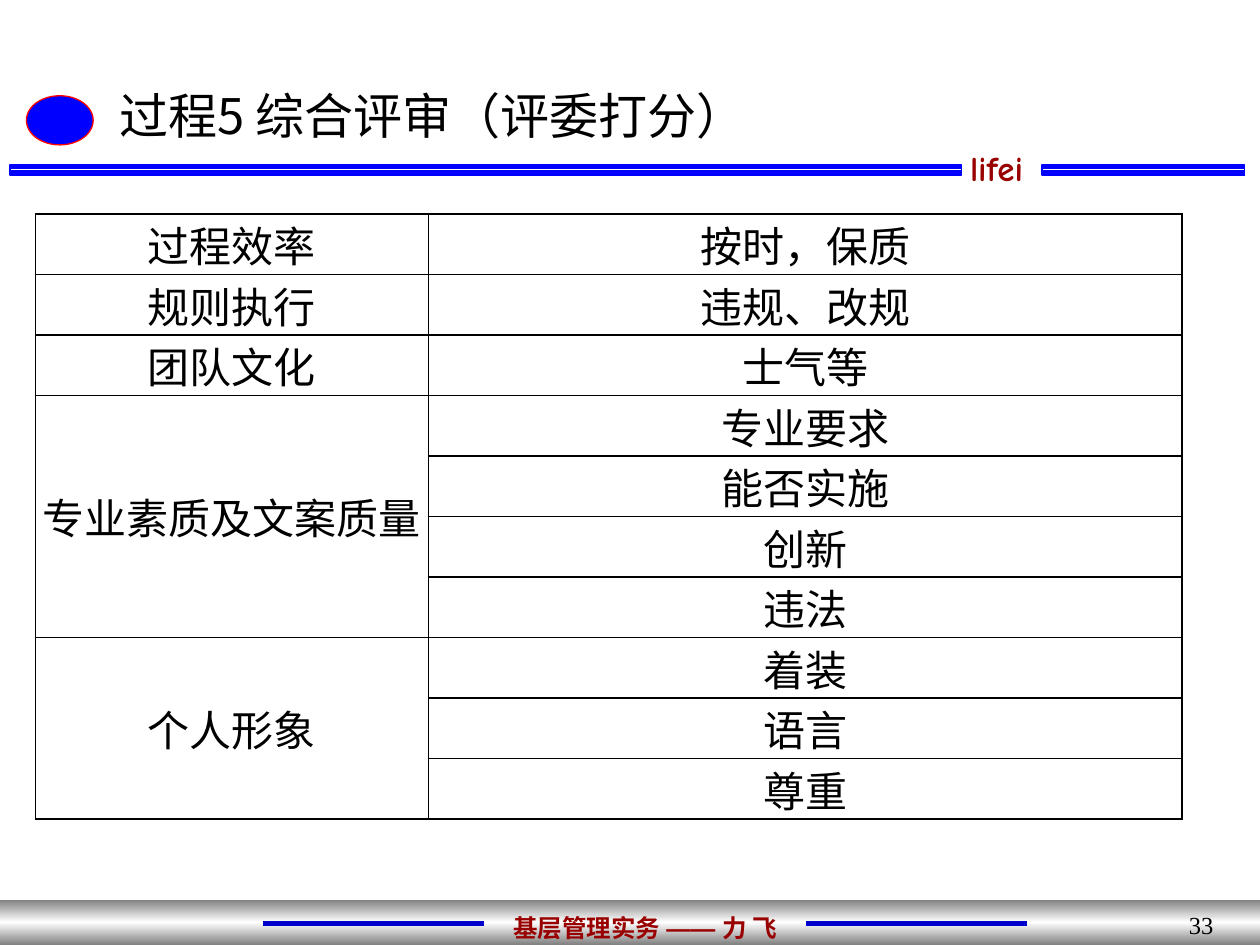
from copy import deepcopy

from lxml import etree
from pptx import Presentation
from pptx import util as u
from pptx.dml.color import RGBColor
from pptx.enum import dml, shapes, text
from pptx.oxml.ns import qn

TITLE = "过程5 综合评审（评委打分）"
CRITERIA = [
    ("过程效率", ["按时，保质"]),
    ("规则执行", ["违规、改规"]),
    ("团队文化", ["士气等"]),
    ("专业素质及文案质量", ["专业要求", "能否实施", "创新", "违法"]),
    ("个人形象", ["着装", "语言", "尊重"]),
]
BRAND = "lifei"
PAGE_NUMBER = "33"
HEADER_BARS = [(0.08, 7.55), (8.27, 1.61)]  # left, width
FOOTER_LINES = [(2.09, 3.84), (6.4, 8.15)]  # from, to
COLUMN_WIDTHS = (3.12, 5.98)
ROW_HEIGHT = 0.48

THEME = {
    "text": "000000", "accent": "990000", "bar": "0000FF", "line": "0000CC",
    "paper": "FFFFFF", "edge": "808080", "logo": "FF0000",
    "cjk": "Noto Sans CJK SC", "latin": "Arial", "brand": "Comic Neue",
    "number": "Times New Roman",
    "title_size": 28, "table_size": 24, "brand_size": 20, "footer_size": 14,
}
FOOTER_RUNS = [("基层管理实务 ", "cjk"), ("—— ", "latin"), ("力 飞", "cjk")]


def color(name):
    return RGBColor.from_string(THEME[name])


def box(left, top, width, height):
    return [u.Inches(value) for value in (left, top, width, height)]


def style_run(run, font, size, ink="text", bold=False):
    """Format a run, naming its font for both Latin and East Asian text."""
    run.font.name = THEME[font]
    run.font.size = u.Pt(THEME[size])
    run.font.bold = bold
    run.font.color.rgb = color(ink)
    east_asian = etree.Element(qn("a:ea"), typeface=THEME[font])
    run.font._element.find(qn("a:latin")).addnext(east_asian)


def add_text(slide, place, runs, size, ink, align, bold=False):
    shape = slide.shapes.add_textbox(*box(*place))
    shape.text_frame.word_wrap = True
    paragraph = shape.text_frame.paragraphs[0]
    paragraph.alignment = align
    for words, font in runs:
        run = paragraph.add_run()
        run.text = words
        style_run(run, font, size, ink, bold)
    return shape


def add_shape(slide, kind, place):
    shape = slide.shapes.add_shape(kind, *box(*place))
    shape.shadow.inherit = False
    return shape


def add_header(slide):
    for left, width in HEADER_BARS:
        bar = add_shape(slide, shapes.MSO_SHAPE.RECTANGLE, (left, 1.31, width, 0.08))
        bar.fill.patterned()
        bar.fill.pattern = dml.MSO_PATTERN.DARK_HORIZONTAL
        bar.fill.fore_color.rgb = color("bar")
        bar.fill.back_color.rgb = color("paper")
        bar.line.color.rgb = color("bar")
        bar.line.width = u.Pt(0.75)

    logo = add_shape(slide, shapes.MSO_SHAPE.OVAL, (0.21, 0.76, 0.53, 0.39))
    logo.fill.solid()
    logo.fill.fore_color.rgb = color("bar")
    logo.line.color.rgb = color("logo")
    logo.line.width = u.Pt(0.75)

    add_text(slide, (7.6, 1.11, 1.02, 0.43), [(BRAND, "brand")],
             "brand_size", "accent", text.PP_ALIGN.LEFT, bold=True)

    title = slide.shapes.title
    title.left, title.top, title.width, title.height = box(0.85, 0.6, 9.03, 0.63)
    frame = title.text_frame
    frame.text = TITLE
    frame.auto_size = text.MSO_AUTO_SIZE.NONE
    frame.vertical_anchor = text.MSO_ANCHOR.MIDDLE
    frame.paragraphs[0].alignment = text.PP_ALIGN.LEFT
    style_run(frame.paragraphs[0].runs[0], "cjk", "title_size")


def add_footer(slide):
    band = add_shape(slide, shapes.MSO_SHAPE.RECTANGLE, (0, 7.14, 10, 0.36))
    band.line.fill.background()
    band.fill.gradient()
    band.fill.gradient_angle = 90
    stop_list = band._element.spPr.find(".//" + qn("a:gsLst"))
    stop_list.append(deepcopy(stop_list[0]))
    for stop, position, name in zip(band.fill.gradient_stops, (0, 0.5, 1),
                                    ("edge", "paper", "edge")):
        stop.position = position
        stop.color.rgb = color(name)

    for start, end in FOOTER_LINES:
        line = slide.shapes.add_connector(
            shapes.MSO_CONNECTOR.STRAIGHT,
            u.Inches(start), u.Inches(7.33), u.Inches(end), u.Inches(7.33))
        line.line.color.rgb = color("line")
        line.line.width = u.Pt(3)
        etree.SubElement(line._element.spPr, qn("a:effectLst"))

    add_text(slide, (3.74, 7.2, 2.76, 0.33), FOOTER_RUNS,
             "footer_size", "accent", text.PP_ALIGN.CENTER, bold=True)
    number = add_text(slide, (7.75, 7.17, 2.08, 0.5), [(PAGE_NUMBER, "number")],
                      "footer_size", "text", text.PP_ALIGN.RIGHT)
    number.text_frame.margin_right = u.Inches(0.2)


def add_borders(cell):
    properties = cell._tc.get_or_add_tcPr()
    for index, side in enumerate(("a:lnL", "a:lnR", "a:lnT", "a:lnB")):
        border = etree.Element(qn(side), w=str(u.Pt(1)))
        fill = etree.SubElement(border, qn("a:solidFill"))
        etree.SubElement(fill, qn("a:srgbClr"), val=THEME["text"])
        properties.insert(index, border)


def fill_cell(cell, words):
    cell.text = words
    paragraph = cell.text_frame.paragraphs[0]
    paragraph.alignment = text.PP_ALIGN.CENTER
    style_run(paragraph.runs[0], "cjk", "table_size")


def add_criteria_table(slide):
    row_count = sum(len(details) for _, details in CRITERIA)
    place = box(0.28, 1.7, sum(COLUMN_WIDTHS), row_count * ROW_HEIGHT)
    table = slide.shapes.add_table(row_count, len(COLUMN_WIDTHS), *place).table
    table.first_row = table.horz_banding = False
    for column, width in zip(table.columns, COLUMN_WIDTHS):
        column.width = u.Inches(width)
    for row in table.rows:
        row.height = u.Inches(ROW_HEIGHT)

    for cell in table.iter_cells():
        cell.fill.background()
        cell.vertical_anchor = text.MSO_ANCHOR.MIDDLE
        cell.margin_left = cell.margin_right = u.Inches(0.05)
        cell.margin_top = cell.margin_bottom = 0
        add_borders(cell)

    first = 0
    for criterion, details in CRITERIA:
        last = first + len(details) - 1
        if last > first:
            table.cell(first, 0).merge(table.cell(last, 0))
        fill_cell(table.cell(first, 0), criterion)
        for row, detail in enumerate(details, first):
            fill_cell(table.cell(row, 1), detail)
        first = last + 1


def main():
    presentation = Presentation()
    presentation.slide_width = u.Inches(10)
    presentation.slide_height = u.Inches(7.5)
    slide = presentation.slides.add_slide(presentation.slide_layouts[5])
    add_header(slide)
    add_footer(slide)
    add_criteria_table(slide)
    presentation.save("out.pptx")


if __name__ == "__main__":
    main()
